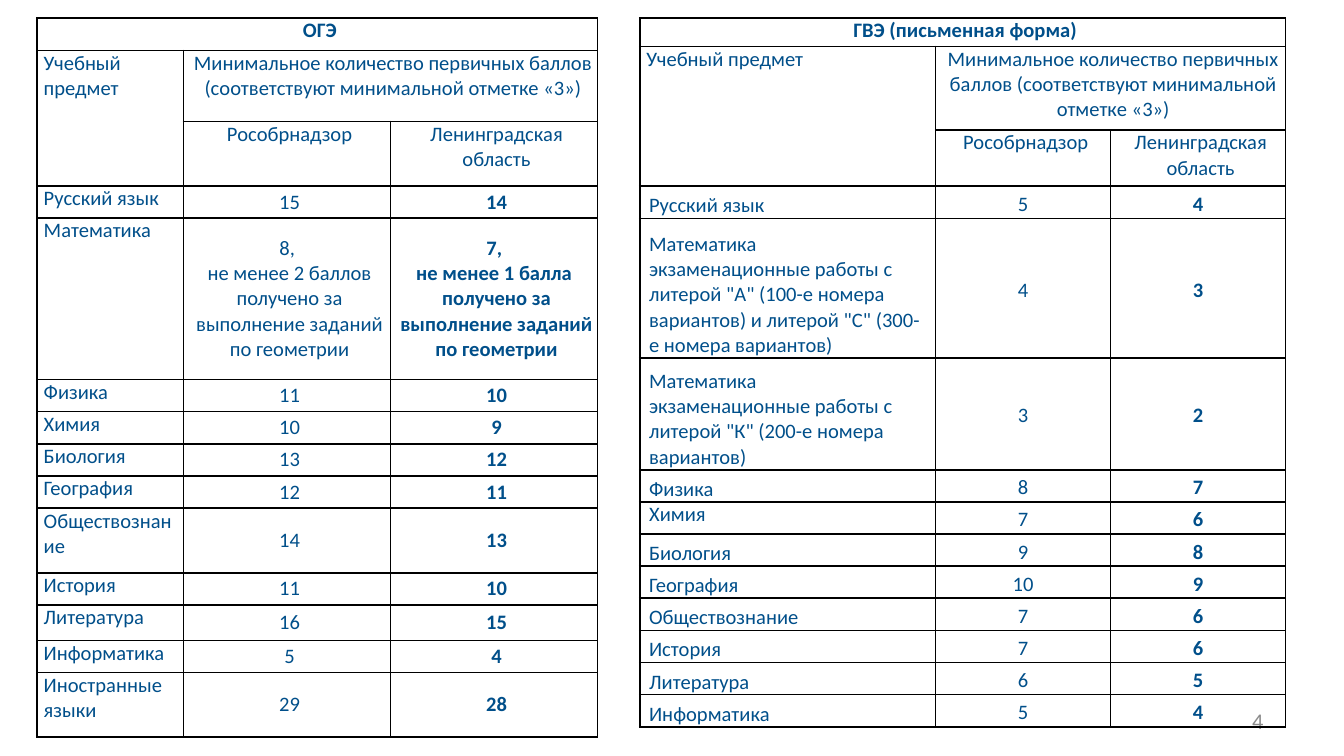
from dataclasses import dataclass

from lxml.etree import SubElement
from pptx import Presentation
from pptx.dml.color import RGBColor
from pptx.enum.text import MSO_ANCHOR, PP_ALIGN
from pptx.oxml.ns import qn
from pptx.util import Inches, Pt


@dataclass(frozen=True)
class Theme:
    """Colours, type sizes and line widths of the slide."""
    font: str = "Calibri"
    ink: RGBColor = RGBColor(0x00, 0x4F, 0x8A)
    muted: RGBColor = RGBColor(0x8C, 0x8C, 0x8C)
    border: str = "000000"
    border_width: int = Pt(1)
    body: int = Pt(11)
    page: int = Pt(12)


@dataclass(frozen=True)
class CellStyle:
    """Margins and paragraph settings of a group of cells."""
    margin: float
    indent: float = 0
    spacing: float | None = None
    label_anchor: MSO_ANCHOR = MSO_ANCHOR.TOP


THEME = Theme()
HEADER_STYLE = CellStyle(margin=0.01, indent=0.04)
WRITTEN_STYLE = CellStyle(margin=0.07, spacing=1.15, label_anchor=MSO_ANCHOR.BOTTOM)

SCORE_HEADING = ("Минимальное количество первичных баллов "
                 "(соответствуют минимальной отметке «3»)")
AGENCIES = ("Рособрнадзор", "Ленинградская область")

MAIN_EXAM = [
    ("Русский язык", "15", "14"),
    ("Математика",
     "8, \nне менее 2 баллов получено за выполнение заданий по геометрии",
     "7, \nне менее 1 балла \nполучено за выполнение заданий по геометрии"),
    ("Физика", "11", "10"),
    ("Химия", "10", "9"),
    ("Биология", "13", "12"),
    ("География", "12", "11"),
    ("Обществознание", "14", "13"),
    ("История", "11", "10"),
    ("Литература", "16", "15"),
    ("Информатика", "5", "4"),
    ("Иностранные языки", "29", "28"),
]
WRITTEN_EXAM = [
    ("Русский язык", "5", "4"),
    ("Математика\nэкзаменационные работы с литерой \"А\" (100-е номера вариантов) "
     "и литерой \"С\" (300-е номера вариантов)", "4", "3"),
    ("Математика\nэкзаменационные работы с литерой \"К\" (200-е номера вариантов)",
     "3", "2"),
    ("Физика", "8", "7"),
    ("Химия", "7", "6"),
    ("Биология", "9", "8"),
    ("География", "10", "9"),
    ("Обществознание", "7", "6"),
    ("История", "7", "6"),
    ("Литература", "6", "5"),
    ("Информатика", "5", "4"),
]


def percent_box(presentation, left, top, width, height):
    """Turn percentages of the slide into a box of lengths."""
    across, down = presentation.slide_width / 100, presentation.slide_height / 100
    return (round(left * across), round(top * down),
            round(width * across), round(height * down))


def add_text(paragraph, text, size, colour, bold=False):
    """Add one formatted run to a paragraph."""
    run = paragraph.add_run()
    run.text = text
    run.font.name = THEME.font
    run.font.size = size
    run.font.bold = bold
    run.font.color.rgb = colour


def outline_cell(cell):
    """Clear the fill of a cell and rule its four sides."""
    cell.fill.background()
    properties = cell._tc.get_or_add_tcPr()
    for position, side in enumerate(("lnL", "lnR", "lnT", "lnB")):
        line = SubElement(properties, qn(f"a:{side}"), w=str(THEME.border_width))
        fill = SubElement(line, qn("a:solidFill"))
        SubElement(fill, qn("a:srgbClr"), val=THEME.border)
        properties.insert(position, line)


def fill_cell(cell, text, style, align=PP_ALIGN.CENTER, anchor=MSO_ANCHOR.TOP,
              bold=False, spacing=None):
    """Write the lines of a text into a cell."""
    cell.margin_left = cell.margin_right = Inches(style.margin)
    cell.margin_top = cell.margin_bottom = 0
    cell.vertical_anchor = anchor
    frame = cell.text_frame
    for index, line in enumerate(text.split("\n")):
        paragraph = frame.add_paragraph() if index else frame.paragraphs[0]
        paragraph.alignment = align
        paragraph.line_spacing = spacing
        paragraph._p.get_or_add_pPr().set("marL", str(Inches(style.indent)))
        add_text(paragraph, line, THEME.body, THEME.ink, bold)


def fill_header(table, title):
    """Merge and write the three header rows."""
    table.cell(0, 0).merge(table.cell(0, 2))
    table.cell(1, 0).merge(table.cell(2, 0))
    table.cell(1, 1).merge(table.cell(1, 2))
    fill_cell(table.cell(0, 0), title, HEADER_STYLE, bold=True)
    fill_cell(table.cell(1, 0), "Учебный предмет", HEADER_STYLE, PP_ALIGN.LEFT)
    fill_cell(table.cell(1, 1), SCORE_HEADING, HEADER_STYLE)
    for column, agency in enumerate(AGENCIES, 1):
        fill_cell(table.cell(2, column), agency, HEADER_STYLE)


def add_score_table(slide, box, title, subjects, column_weights, row_weights, style,
                    top_labels=()):
    """Place a table of minimum scores whose tracks share the box by weight."""
    left, top, width, height = box
    frame = slide.shapes.add_table(len(row_weights), len(column_weights),
                                   left, top, width, height)
    table = frame.table
    table.first_row = table.horz_banding = False
    for column, weight in zip(table.columns, column_weights):
        column.width = round(width * weight / sum(column_weights))
    for row, weight in zip(table.rows, row_weights):
        row.height = round(height * weight / sum(row_weights))
    for cell in table.iter_cells():
        outline_cell(cell)
    fill_header(table, title)
    for row, (subject, federal, regional) in enumerate(subjects, 3):
        anchor = MSO_ANCHOR.TOP if subject in top_labels else style.label_anchor
        fill_cell(table.cell(row, 0), subject, style, PP_ALIGN.LEFT, anchor)
        for column, score in enumerate((federal, regional), 1):
            fill_cell(table.cell(row, column), score, style, anchor=MSO_ANCHOR.MIDDLE,
                      bold=column == 2, spacing=style.spacing)


def add_page_number(slide, box, number):
    """Place the page number at the right of its box."""
    frame = slide.shapes.add_textbox(*box).text_frame
    frame.word_wrap = True
    frame.vertical_anchor = MSO_ANCHOR.MIDDLE
    paragraph = frame.paragraphs[0]
    paragraph.alignment = PP_ALIGN.RIGHT
    add_text(paragraph, number, THEME.page, THEME.muted)


def main():
    """Build the slide and save it."""
    presentation = Presentation()
    presentation.slide_width = Inches(10)
    presentation.slide_height = presentation.slide_width * 9 // 16
    slide = presentation.slides.add_slide(presentation.slide_layouts[6])
    add_page_number(slide, percent_box(presentation, 71.7, 92.7, 23.3, 5.3), "4")
    add_score_table(
        slide, percent_box(presentation, 2.75, 2.4, 41.7, 95.2), "ОГЭ", MAIN_EXAM,
        (1.09, 1.54, 1.54),
        (1, 2.2, 2, 1, 5, *[1] * 4, 2, 1, 1.1, 1, 2), HEADER_STYLE)
    add_score_table(
        slide, percent_box(presentation, 47.6, 2.4, 48.05, 93.8),
        "ГВЭ (письменная форма)", WRITTEN_EXAM, (2.2, 1.3, 1.3),
        (0.88, 2.6, 1.75, 1, 4.35, 3.47, *[1] * 8), WRITTEN_STYLE,
        top_labels=("Химия",))
    presentation.save("out.pptx")


if __name__ == "__main__":
    main()
